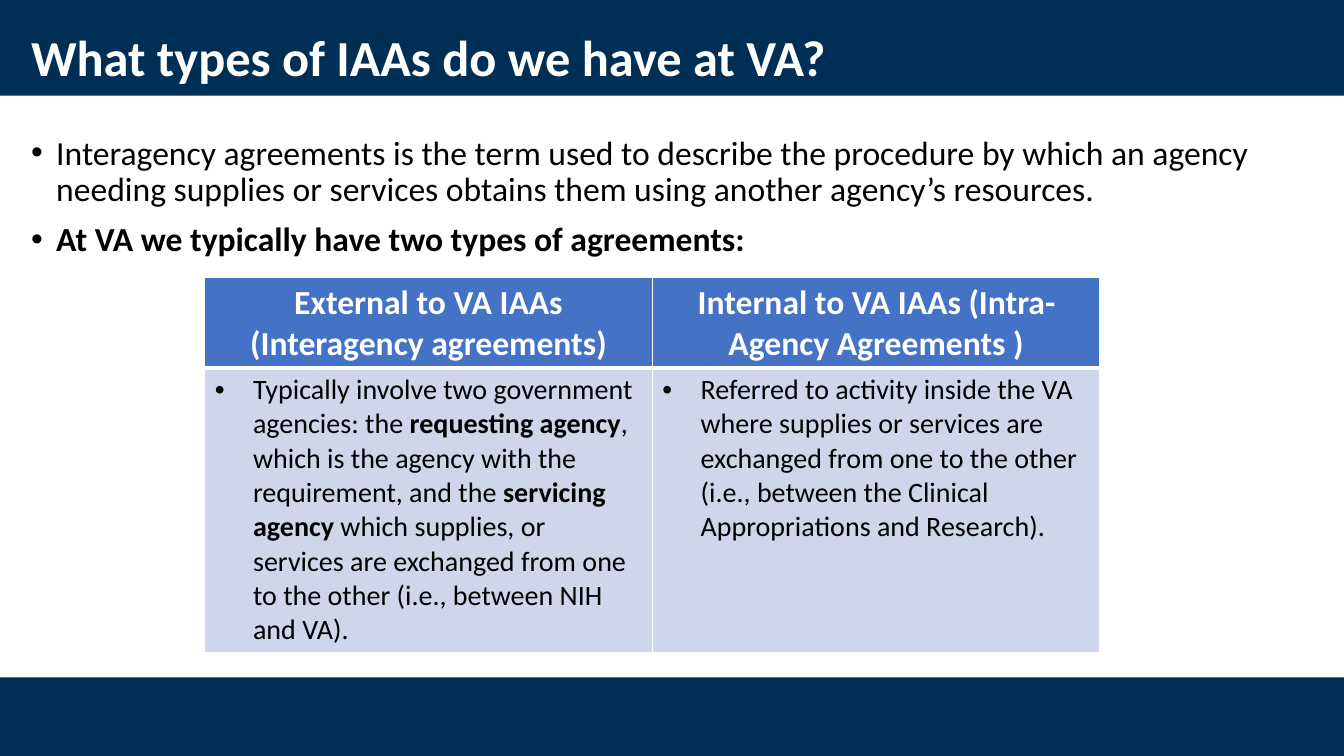
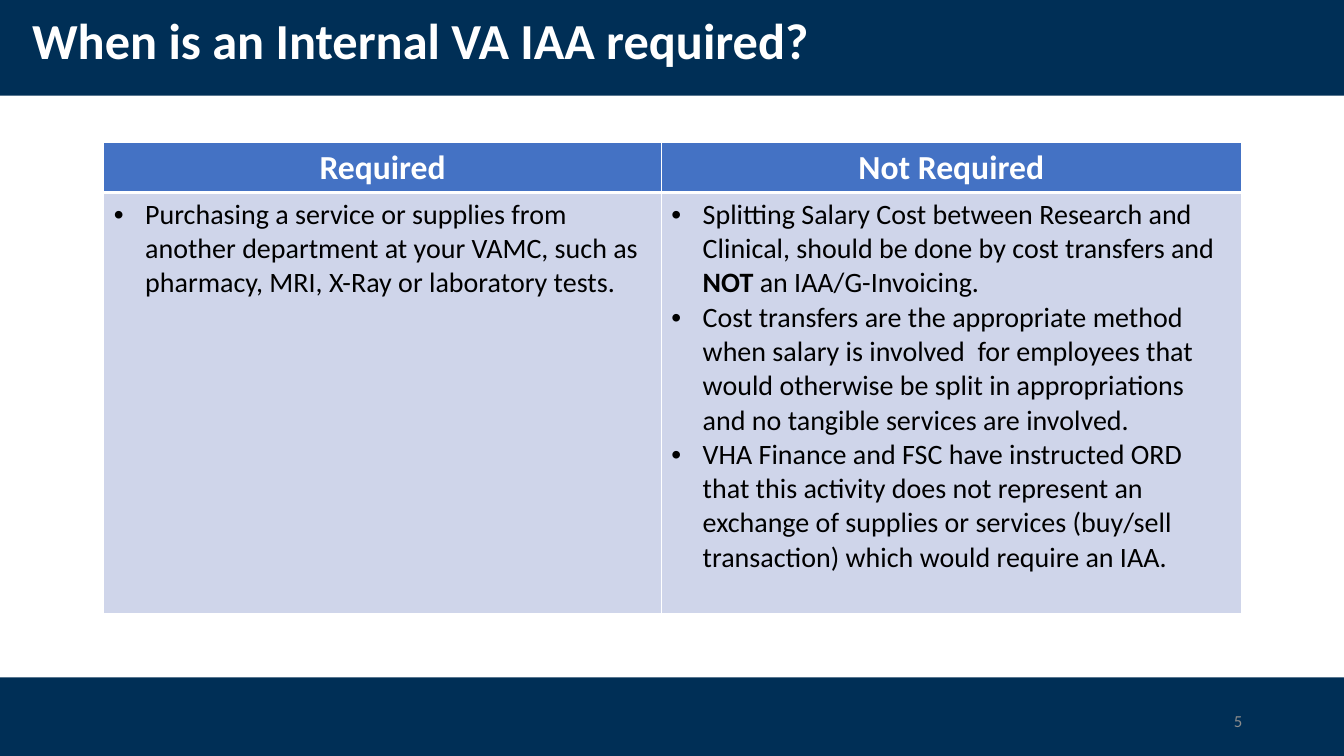
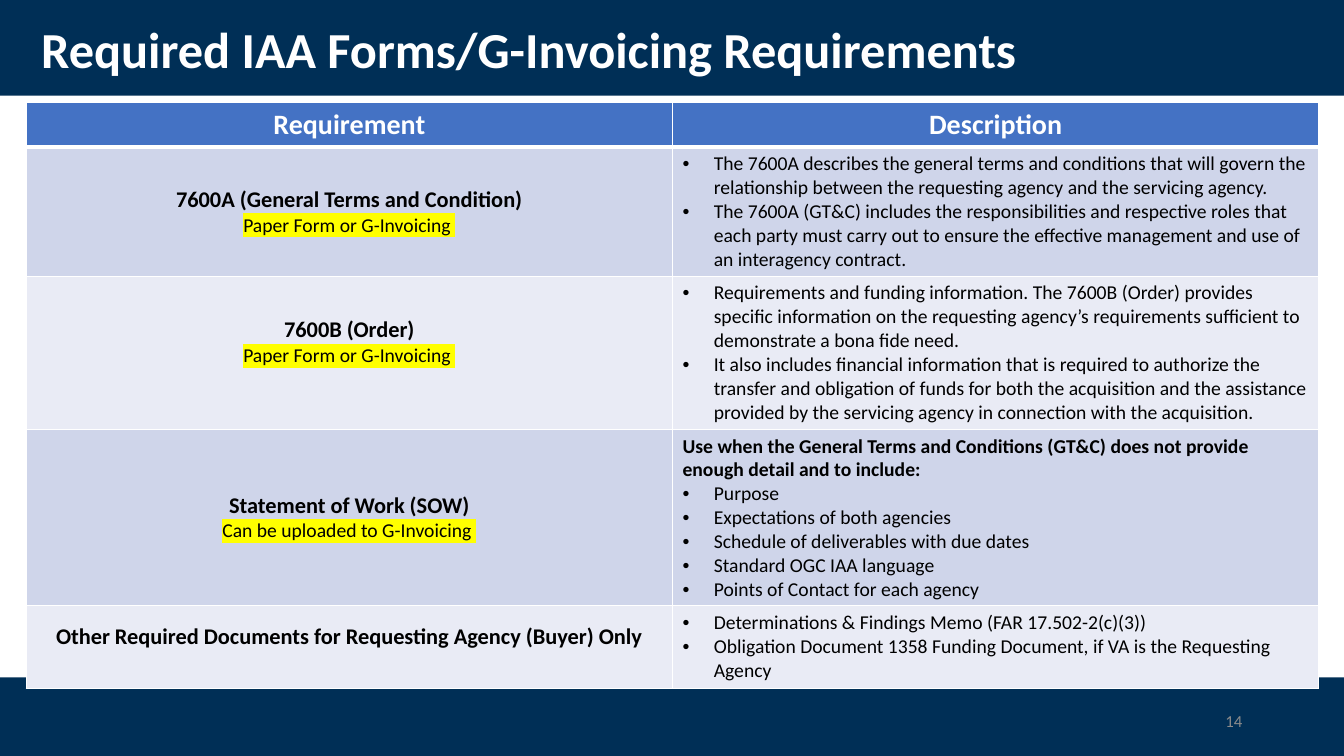
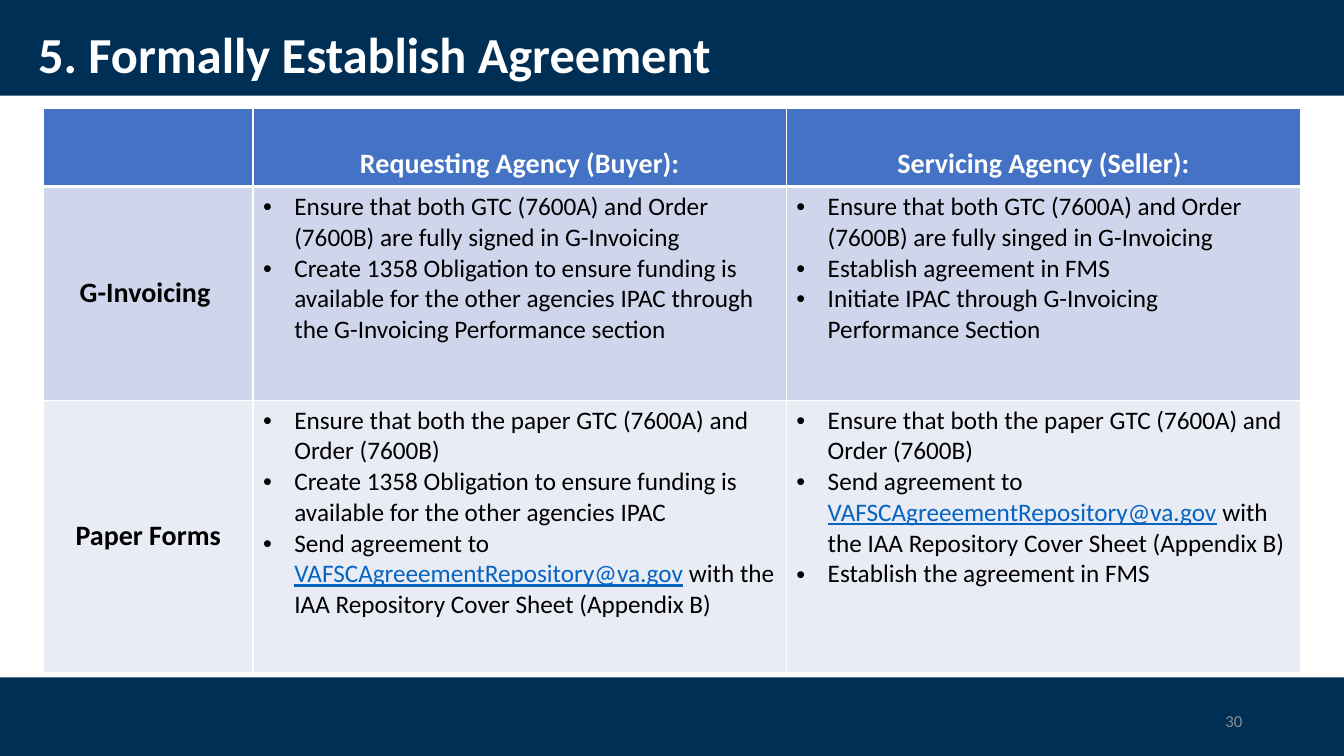
import pptx
import pptx.dml.color
import pptx.enum.shapes
import pptx.enum.text
import pptx.oxml
import pptx.oxml.ns
import pptx.util

Inches = pptx.util.Inches
Pt = pptx.util.Pt
ALIGN = pptx.enum.text.PP_ALIGN
ANCHOR = pptx.enum.text.MSO_ANCHOR
NS = pptx.oxml.ns.nsdecls("a")

COLORS = {
    "band": "002F56",
    "header": "4472C4",
    "odd": "CFD5EA",
    "even": "E9EBF5",
    "white": "FFFFFF",
    "text": "000000",
    "link": "0563C1",
    "number": "8C8C8C",
    "mark": "FFFF00",
}
REPOSITORY = ("VAFSCAgreeementRepository@va.gov", "link")
COVER_SHEET = [
    ("Send agreement to ", ""),
    REPOSITORY,
    (" with the IAA Repository Cover Sheet (Appendix B)", ""),
]


def rgb(name):
    return pptx.dml.color.RGBColor.from_string(COLORS[name])


class Deck:
    font = "Calibri"

    def __init__(self):
        self.prs = pptx.Presentation()
        self.prs.slide_width = Inches(13.33)
        self.prs.slide_height = Inches(7.5)
        self.s = None

    def slide(self, number=None):
        self.s = self.prs.slides.add_slide(self.prs.slide_layouts[6])
        self.band(0, 0.95)
        self.band(6.72, 0.8)
        if number:
            tf = self.box(9.42, 6.95, 3, 0.4)
            self.fill_paragraph(tf.paragraphs[0], str(number), 12, "number", align=ALIGN.RIGHT)

    def band(self, top, height):
        sp = self.s.shapes.add_shape(
            pptx.enum.shapes.MSO_SHAPE.RECTANGLE, 0, Inches(top), self.prs.slide_width, Inches(height))
        sp.shadow.inherit = False
        sp.fill.solid()
        sp.fill.fore_color.rgb = rgb("band")
        sp.line.fill.background()

    def box(self, left, top, width, height, anchor=ANCHOR.MIDDLE):
        sp = self.s.shapes.add_textbox(Inches(left), Inches(top), Inches(width), Inches(height))
        tf = sp.text_frame
        tf.word_wrap = True
        tf.vertical_anchor = anchor
        return tf

    def title(self, text, left, top, width=11.5, height=0.68, spacing=0.9):
        p = self.box(left, top, width, height).paragraphs[0]
        p.line_spacing = spacing
        self.fill_paragraph(p, text, 36, "white", bold=True)

    def bullets(self, left, top, width, height, items, size):
        tf = self.box(left, top, width, height, ANCHOR.TOP)
        for i, item in enumerate(items):
            p = tf.paragraphs[0] if i == 0 else tf.add_paragraph()
            p.line_spacing = 0.9
            if i:
                p.space_before = Pt(10)
            self.bullet(p, 0.25)
            self.fill_paragraph(p, item, size)

    def bullet(self, p, indent):
        pPr = p._p.get_or_add_pPr()
        pPr.set("marL", str(Inches(indent)))
        pPr.set("indent", str(-Inches(indent)))
        pPr.append(pptx.oxml.parse_xml(f'<a:buFont {NS} typeface="Arial"/>'))
        pPr.append(pptx.oxml.parse_xml(f'<a:buChar {NS} char="•"/>'))

    def fill_paragraph(self, p, content, size, color="text", bold=False, align=None):
        if align is not None:
            p.alignment = align
        pieces = [(content, "")] if isinstance(content, str) else content
        for text, style in pieces:
            if not text:
                continue
            r = p.add_run()
            r.text = text
            r.font.name = self.font
            r.font.size = Pt(size)
            r.font.bold = bold or style in ("bold", "lead")
            r.font.color.rgb = rgb("link" if style == "link" else color)
            if style == "link":
                r.font.underline = True
            if style == "mark":
                fill = r._r.rPr.find(pptx.oxml.ns.qn("a:solidFill"))
                fill.addnext(pptx.oxml.parse_xml(
                    f'<a:highlight {NS}><a:srgbClr val="{COLORS["mark"]}"/></a:highlight>'))

    def borders(self, cell, row):
        tcPr = cell._tc.get_or_add_tcPr()
        widths = {"L": 1, "R": 1, "T": 3 if row == 1 else 1, "B": 3 if row == 0 else 1}
        for i, (side, width) in enumerate(widths.items()):
            tcPr.insert(i, pptx.oxml.parse_xml(
                f'<a:ln{side} {NS} w="{Pt(width)}"><a:solidFill>'
                f'<a:srgbClr val="{COLORS["white"]}"/></a:solidFill></a:ln{side}>'))

    def header_cell(self, cell, text, size):
        cell.vertical_anchor = ANCHOR.BOTTOM
        self.fill_paragraph(cell.text_frame.paragraphs[0], text, size, "white", True, ALIGN.CENTER)

    def label_cell(self, cell, name, note, label_size, size):
        cell.vertical_anchor = ANCHOR.MIDDLE
        tf = cell.text_frame
        self.fill_paragraph(tf.paragraphs[0], name, label_size, bold=True, align=ALIGN.CENTER)
        if note:
            self.fill_paragraph(tf.add_paragraph(), [(note, "mark")], size, align=ALIGN.CENTER)

    def list_cell(self, cell, items, size, indent):
        tf = cell.text_frame
        for i, item in enumerate(items):
            p = tf.paragraphs[0] if i == 0 else tf.add_paragraph()
            if isinstance(item, str) or item[0][1] != "lead":
                self.bullet(p, indent)
            self.fill_paragraph(p, item, size)

    def table(self, left, top, widths, heights, header, rows, header_size, size,
              label_size=None, indent=0.31):
        shape = self.s.shapes.add_table(
            len(heights), len(widths), Inches(left), Inches(top),
            Inches(sum(widths)), Inches(sum(heights)))
        tbl = shape.table
        tbl.horz_banding = False
        for column, width in zip(tbl.columns, widths):
            column.width = Inches(width)
        for i, (row, height) in enumerate(zip(tbl.rows, heights)):
            row.height = Inches(height)
            for j, cell in enumerate(row.cells):
                cell.fill.solid()
                cell.fill.fore_color.rgb = rgb("header" if i == 0 else "odd" if i % 2 else "even")
                self.borders(cell, i)
                if i == 0:
                    self.header_cell(cell, header[j], header_size)
                elif j == 0 and label_size:
                    self.label_cell(cell, *rows[i - 1][0], label_size, size)
                else:
                    self.list_cell(cell, rows[i - 1][j], size, indent)
        return tbl


def agreement_types(deck):
    deck.slide()
    deck.title("What types of IAAs do we have at VA?", 0.21, 0.2, 11.9, 0.71, 1.0)
    deck.bullets(0.21, 1.3, 12.54, 4.73, [
        "Interagency agreements is the term used to describe the procedure by which an agency "
        "needing supplies or services obtains them using another agency’s resources.",
        [("At VA we typically have two types of agreements:", "bold")],
    ], 24)
    external = [
        ("Typically involve two government agencies: the ", ""),
        ("requesting agency", "bold"),
        (", which is the agency with the requirement, and the", ""),
        (" servicing agency ", "bold"),
        ("which supplies, or services are exchanged from one to the other "
         "(i.e., between NIH and VA).", ""),
    ]
    internal = (
        "Referred to activity inside the VA where supplies or services are exchanged from one "
        "to the other (i.e., between the Clinical Appropriations and Research).")
    deck.table(
        2.03, 2.75, [4.44, 4.44], [0.9, 2.82],
        ["External to VA IAAs (Interagency agreements)",
         "Internal to VA IAAs (Intra-Agency Agreements )"],
        [[[external], [internal]]], 24, 20, indent=0.38)


def internal_agreement(deck):
    deck.slide(5)
    deck.title("When is an Internal VA IAA required?", 0.22, 0.09)
    required = [
        "Purchasing a service or supplies from another department at your VAMC, such as "
        "pharmacy, MRI, X-Ray or laboratory tests.",
    ]
    not_required = [
        [("Splitting Salary Cost between Research and Clinical, should be done by cost "
          "transfers and ", ""), ("NOT", "bold"), (" an IAA/G-Invoicing.", "")],
        "Cost transfers are the appropriate method when salary is involved  for employees that "
        "would otherwise be split in appropriations and no tangible services are involved.",
        "VHA Finance and FSC have instructed ORD that this activity does not represent an "
        "exchange of supplies or services (buy/sell transaction) which would require an IAA.",
    ]
    deck.table(1.03, 1.41, [5.53, 5.75], [0.5, 4.18], ["Required", "Not Required"],
               [[required, not_required]], 24, 20)


def required_forms(deck):
    deck.slide(14)
    deck.title("Required IAA Forms/G-Invoicing Requirements", 0.31, 0.18)
    either = "Paper Form or G-Invoicing "
    rows = [
        [("7600A (General Terms and Condition)", either), [
            "The 7600A describes the general terms and conditions that will govern the "
            "relationship between the requesting agency and the servicing agency.",
            "The 7600A (GT&C) includes the responsibilities and respective roles that each party "
            "must carry out to ensure the effective management and use of an interagency contract.",
        ]],
        [("7600B (Order)", either), [
            "Requirements and funding information. The 7600B (Order) provides specific information "
            "on the requesting agency’s requirements sufficient to demonstrate a bona fide need.",
            "It also includes financial information that is required to authorize the transfer and "
            "obligation of funds for both the acquisition and the assistance provided by the "
            "servicing agency in connection with the acquisition.",
        ]],
        [("Statement of Work (SOW)", "Can be uploaded to G-Invoicing "), [
            [("Use when the General Terms and Conditions (GT&C) does not provide enough detail "
              "and to include:", "lead")],
            "Purpose",
            "Expectations of both agencies",
            "Schedule of deliverables with due dates",
            "Standard OGC IAA language",
            "Points of Contact for each agency",
        ]],
        [("Other Required Documents for Requesting Agency (Buyer) Only", None), [
            "Determinations & Findings Memo (FAR 17.502-2(c)(3))",
            "Obligation Document 1358 Funding Document, if VA is the Requesting Agency",
        ]],
    ]
    tbl = deck.table(0.26, 1.02, [6.41, 6.41], [0.44, 1.28, 1.52, 1.75, 0.82],
                     ["Requirement", "Description"], rows, 20, 14, label_size=16)
    for row in (2, 4):
        tbl.cell(row, 0).margin_bottom = Inches(0.26)


def establish_agreement(deck):
    deck.slide(30)
    deck.title("5. Formally Establish Agreement", 0.28, 0.23)
    paper = "Ensure that both the paper GTC (7600A) and Order (7600B)"
    obligation = ("Create 1358 Obligation to ensure funding is available for the other "
                  "agencies IPAC")
    rows = [
        [("G-Invoicing ", None), [
            "Ensure that both GTC (7600A) and Order (7600B) are fully signed in G-Invoicing",
            obligation + " through the G-Invoicing Performance section",
        ], [
            "Ensure that both GTC (7600A) and Order (7600B) are fully singed in G-Invoicing",
            "Establish agreement in FMS",
            "Initiate IPAC through G-Invoicing Performance Section",
        ]],
        [("Paper Forms", None),
         [paper, obligation, COVER_SHEET],
         [paper, COVER_SHEET, "Establish the agreement in FMS"]],
    ]
    deck.table(0.43, 1.08, [2.08, 5.29, 5.1], [0.77, 2.12, 2.7],
               ["", "Requesting Agency (Buyer):", "Servicing Agency (Seller):"],
               rows, 20, 18, label_size=20)


def main():
    deck = Deck()
    agreement_types(deck)
    internal_agreement(deck)
    required_forms(deck)
    establish_agreement(deck)
    deck.prs.save("out.pptx")


if __name__ == "__main__":
    main()
